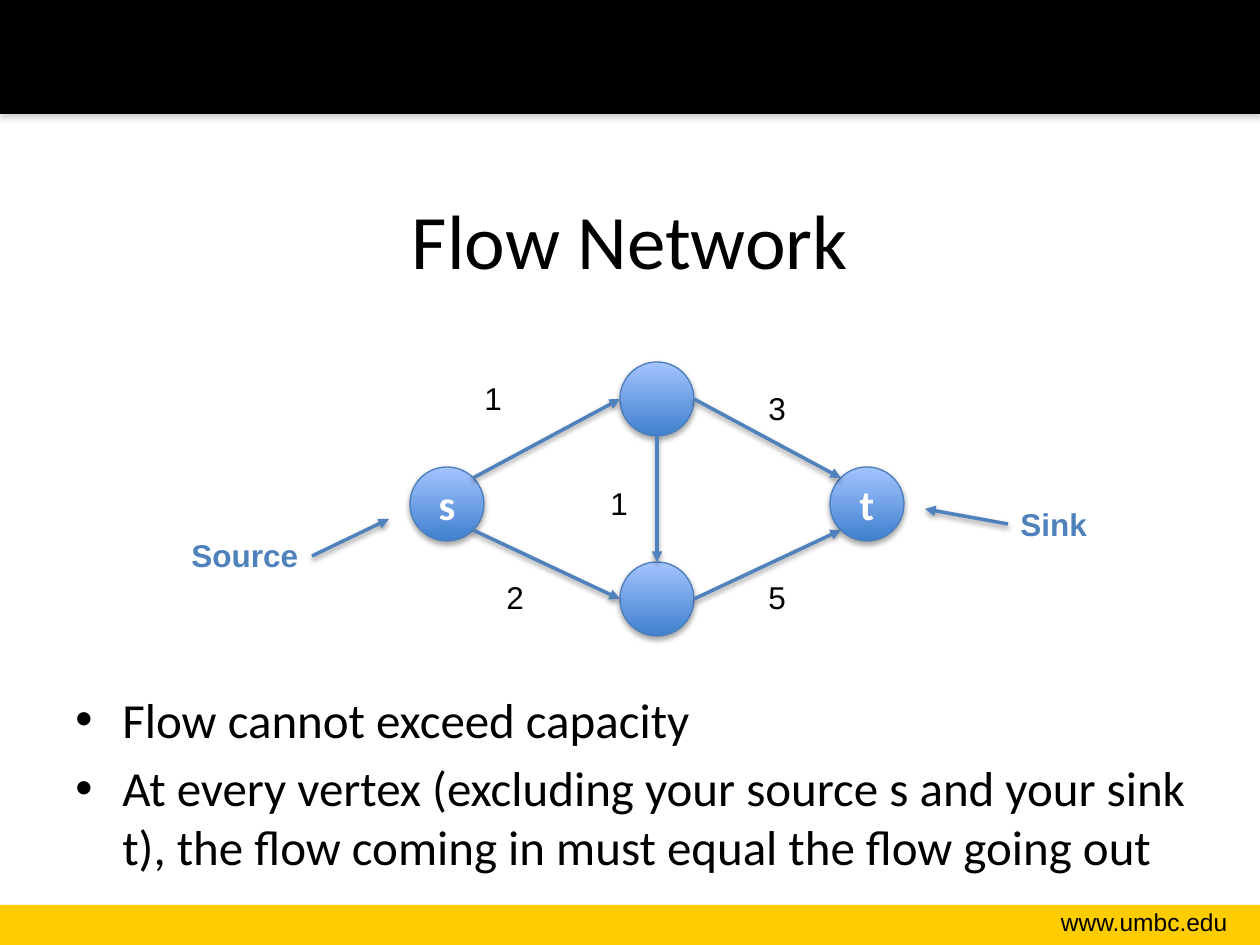
import pptx
import pptx.dml.color
import pptx.enum.shapes
import pptx.enum.text
import pptx.oxml
import pptx.oxml.ns
import pptx.util

SHAPE = pptx.enum.shapes.MSO_SHAPE
ALIGN = pptx.enum.text.PP_ALIGN
ANCHOR = pptx.enum.text.MSO_ANCHOR
NS = pptx.oxml.ns.nsdecls("a")
BLUE = "4F81BD"
BLACK = "000000"
SIZE = 74  # node diameter
HALF = SIZE // 2
DIAG = round(HALF * 0.707)


def emu(px):
    return pptx.util.Emu(round(px * 914400 / 126))


def rgb(code):
    return pptx.dml.color.RGBColor.from_string(code)


def style(par, size, color=BLACK, font="Arial", bold=False):
    for run in par.runs:
        run.font.size = pptx.util.Pt(size)
        run.font.name = font
        run.font.bold = bold
        run.font.color.rgb = rgb(color)


def shade(spot, color=BLACK, alpha=35, dist=23000):
    """Add a soft shadow that falls straight down."""
    spot.append(pptx.oxml.parse_xml(
        f'<a:effectLst {NS}><a:outerShdw blurRad="40000" dist="{dist}" '
        f'dir="5400000" rotWithShape="0"><a:srgbClr val="{color}">'
        f'<a:alpha val="{alpha}000"/></a:srgbClr></a:outerShdw></a:effectLst>'))


def add_band(slide, top, height, color):
    band = slide.shapes.add_shape(
        SHAPE.RECTANGLE, 0, emu(top), emu(1260), emu(height))
    band.fill.solid()
    band.fill.fore_color.rgb = rgb(color)
    band.line.fill.background()
    return band


def add_title(slide, text):
    title = slide.shapes.title
    title.left, title.top = emu(63), emu(160)
    title.width, title.height = emu(1134), emu(158)
    frame = title.text_frame
    frame.text = text
    frame.vertical_anchor = ANCHOR.MIDDLE
    frame.paragraphs[0].alignment = ALIGN.CENTER
    style(frame.paragraphs[0], 44, font="Calibri")


def add_list(slide, items):
    box = slide.shapes.add_textbox(emu(63), emu(683), emu(1166), emu(173))
    frame = box.text_frame
    frame.word_wrap = True
    frame.text = "\n".join(items)
    for i, par in enumerate(frame.paragraphs):
        props = par._p.get_or_add_pPr()
        props.set("marL", str(emu(47)))
        props.set("indent", str(emu(-47)))
        props.append(pptx.oxml.parse_xml(f'<a:buFont {NS} typeface="Arial"/>'))
        props.append(pptx.oxml.parse_xml(f'<a:buChar {NS} char="•"/>'))
        par.space_before = pptx.util.Pt(5.6 if i else 0)
        style(par, 28, font="Calibri")


def add_label(slide, text, left, top, width, size=18, color=BLACK,
              bold=False, align=ALIGN.LEFT):
    box = slide.shapes.add_textbox(emu(left), emu(top), emu(width), emu(50))
    frame = box.text_frame
    frame.word_wrap = False
    frame.text = text
    frame.paragraphs[0].alignment = align
    style(frame.paragraphs[0], size, color, bold=bold)


def add_node(slide, mid, text):
    x, y = mid
    node = slide.shapes.add_shape(
        SHAPE.OVAL, emu(x - HALF), emu(y - HALF), emu(SIZE), emu(SIZE))
    node.fill.gradient()
    node.fill.gradient_angle = 90
    for stop, color in zip(node.fill.gradient_stops, ("3F80CE", "A4C4FF")):
        stop.color.rgb = rgb(color)
    node.line.color.rgb = rgb("4B7EBC")
    node.line.width = pptx.util.Pt(0.75)
    shade(node._element.spPr)
    if text:
        frame = node.text_frame
        frame.text = text
        frame.vertical_anchor = ANCHOR.MIDDLE
        frame.paragraphs[0].alignment = ALIGN.CENTER
        style(frame.paragraphs[0], 24, "FFFFFF", "Calibri", True)


def add_arrow(slide, start, end):
    line = slide.shapes.add_connector(
        pptx.enum.shapes.MSO_CONNECTOR.STRAIGHT,
        *[emu(v) for v in (*start, *end)])
    line.line.color.rgb = rgb(BLUE)
    line.line.width = pptx.util.Pt(2)
    line.line._get_or_add_ln().append(
        pptx.oxml.parse_xml(f'<a:tailEnd {NS} type="triangle"/>'))
    shade(line._element.spPr, alpha=38, dist=20000)


def shift(mid, dx, dy):
    return mid[0] + dx, mid[1] + dy


def add_graph(slide):
    s, t = (447, 504), (867, 504)
    high, low = (657, 399), (657, 599)
    for mid, text in ((s, "s"), (high, ""), (low, ""), (t, "t")):
        add_node(slide, mid, text)

    for mid, dy in ((high, -DIAG), (low, DIAG)):
        add_arrow(slide, shift(s, DIAG, dy), shift(mid, -HALF, 0))
        add_arrow(slide, shift(mid, HALF, 0), shift(t, -DIAG, dy))
    add_arrow(slide, shift(high, 0, HALF), shift(low, 0, -HALF))

    caps = (("1", 472, 373), ("2", 494, 572), ("1", 598, 478),
            ("3", 756, 383), ("5", 756, 572))
    for text, left, top in caps:
        add_label(slide, text, left, top, 43)

    add_label(slide, "Source", 179, 530, 134, color=BLUE, bold=True)
    add_arrow(slide, (312, 556), (389, 519))
    add_label(slide, "Sink", 1008, 499, 92, color=BLUE, bold=True)
    add_arrow(slide, (1008, 524), (925, 509))


def main():
    deck = pptx.Presentation()
    deck.slide_width, deck.slide_height = emu(1260), emu(945)
    slide = deck.slides.add_slide(deck.slide_layouts[5])
    foot = add_band(slide, 905, 40, "FFCC00")
    foot.shadow.inherit = False
    head = add_band(slide, 0, 114, BLACK)
    shade(head._element.spPr, "808080")
    add_label(slide, "www.umbc.edu", 989, 901, 251, 14, align=ALIGN.RIGHT)
    add_title(slide, "Flow Network")
    add_list(slide, (
        "Flow cannot exceed capacity",
        "At every vertex (excluding your source s and your sink t), "
        "the flow coming in must equal the flow going out"))
    add_graph(slide)
    deck.save("out.pptx")


if __name__ == "__main__":
    main()
